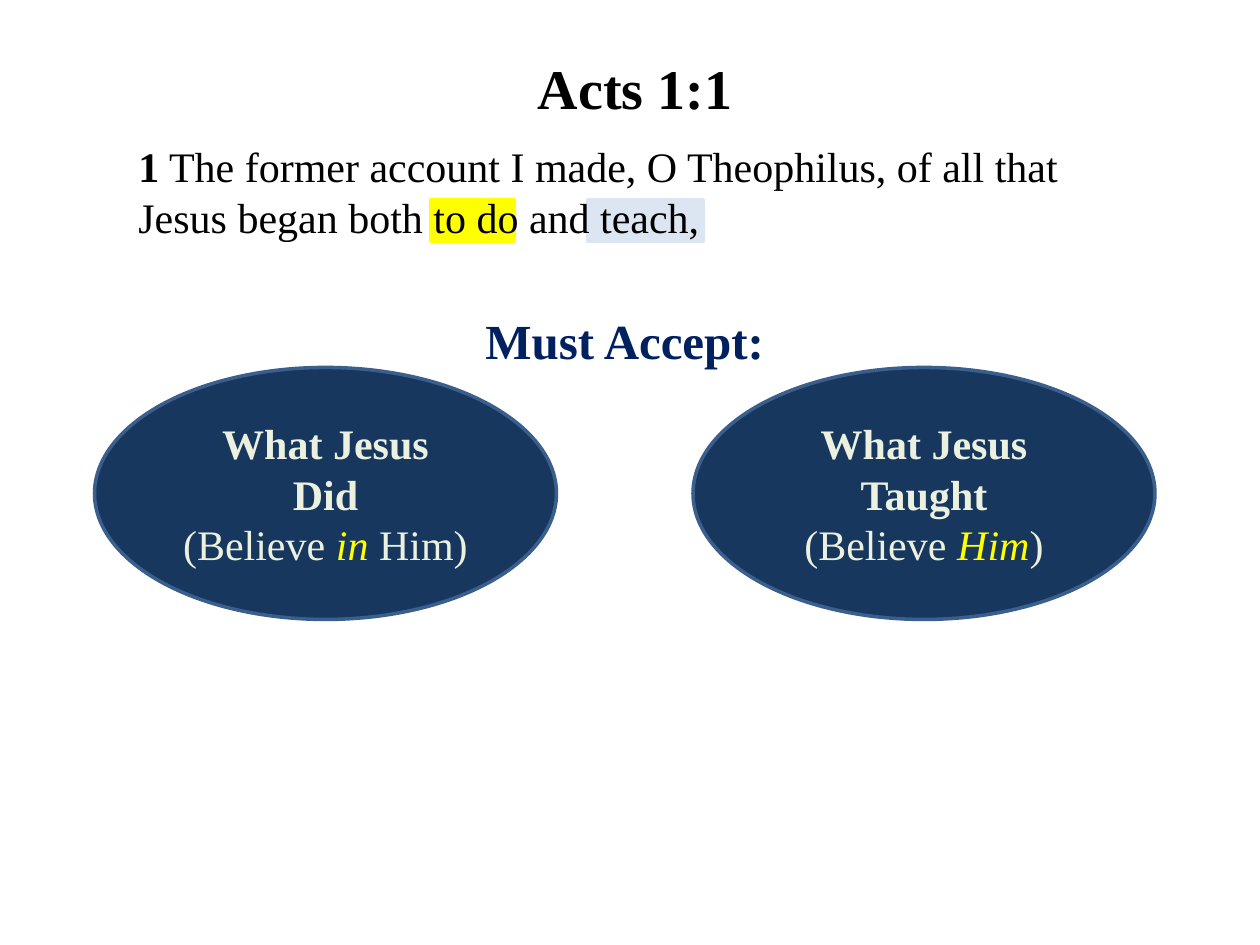
from dataclasses import dataclass

from pptx import Presentation
from pptx.dml.color import RGBColor
from pptx.enum.shapes import MSO_SHAPE
from pptx.enum.text import MSO_ANCHOR, PP_ALIGN
from pptx.util import Inches, Pt

FONT = "Times New Roman"
COLUMNS, ROWS = 120, 90
PALE, YELLOW, CREAM = "DCE6F2", "FFFF00", "EBF1DE"


@dataclass
class Area:
    column: float
    row: float
    columns: float
    rows: float


@dataclass
class Span:
    text: str
    bold: bool = False
    italic: bool = False
    color: str = ""


@dataclass
class Line:
    spans: list[Span]
    size: int
    color: str
    align: PP_ALIGN = PP_ALIGN.CENTER
    space_before: float = 0


@dataclass
class Highlight:
    area: Area
    color: str


@dataclass
class Belief:
    column: float
    deed: str
    emphasis: str
    ending: str


HIGHLIGHTS = [
    Highlight(Area(56, 19, 11, 4), PALE),
    Highlight(Area(41, 19, 8, 4), YELLOW),
]
BELIEFS = [
    Belief(9, "Did", "in", " Him)"),
    Belief(66, "Taught", "Him", ")"),
]
VERSE = " The former account I made, O Theophilus, of all that Jesus began both to do and teach,"

deck = Presentation()
deck.slide_width, deck.slide_height = Inches(10), Inches(7.5)
page = deck.slides.add_slide(deck.slide_layouts[6])


def rgb(color: str) -> RGBColor:
    return RGBColor.from_string(color)


def place(area: Area) -> tuple[int, int, int, int]:
    cell_width = deck.slide_width / COLUMNS
    cell_height = deck.slide_height / ROWS
    return (
        round(area.column * cell_width),
        round(area.row * cell_height),
        round(area.columns * cell_width),
        round(area.rows * cell_height),
    )


def write(frame, lines: list[Line]) -> None:
    frame.word_wrap = True
    for index, line in enumerate(lines):
        para = frame.add_paragraph() if index else frame.paragraphs[0]
        para.alignment = line.align
        if line.space_before:
            para.space_before = Pt(line.space_before)
        para.font.name = FONT
        para.font.size = Pt(line.size)
        para.font.color.rgb = rgb(line.color)
        for span in line.spans:
            run = para.add_run()
            run.text = span.text
            run.font.bold = span.bold
            run.font.italic = span.italic
            if span.color:
                run.font.color.rgb = rgb(span.color)


def draw_shape(kind: MSO_SHAPE, area: Area, fill: str, outline: str):
    shape = page.shapes.add_shape(kind, *place(area))
    shape.shadow.inherit = False
    shape.fill.solid()
    shape.fill.fore_color.rgb = rgb(fill)
    shape.line.color.rgb = rgb(outline)
    shape.line.width = Pt(2)
    return shape


def draw_text(area: Area, lines: list[Line]) -> None:
    box = page.shapes.add_textbox(*place(area))
    write(box.text_frame, lines)


def draw_belief(belief: Belief) -> None:
    area = Area(belief.column, 35, 44, 24)
    ellipse = draw_shape(MSO_SHAPE.OVAL, area, "17375E", "3A5F8C")
    ellipse.text_frame.vertical_anchor = MSO_ANCHOR.MIDDLE
    response = [
        Span("(Believe "),
        Span(belief.emphasis, italic=True, color=YELLOW),
        Span(belief.ending),
    ]
    rows = [[Span("What Jesus", bold=True)], [Span(belief.deed, bold=True)], response]
    write(ellipse.text_frame, [Line(spans, 24, CREAM) for spans in rows])


for highlight in HIGHLIGHTS:
    draw_shape(MSO_SHAPE.RECTANGLE, highlight.area, highlight.color, highlight.color)

draw_text(Area(12, 4.5, 97, 19.5), [
    Line([Span("Acts 1:1", bold=True)], 32, "000000"),
    Line([Span("1", bold=True), Span(VERSE)], 24, "000000", PP_ALIGN.LEFT, 11.5),
])
draw_text(Area(32, 29, 55, 6.84), [
    Line([Span("Must Accept:", bold=True)], 28, "002060"),
])
for belief in BELIEFS:
    draw_belief(belief)

deck.save("out.pptx")
